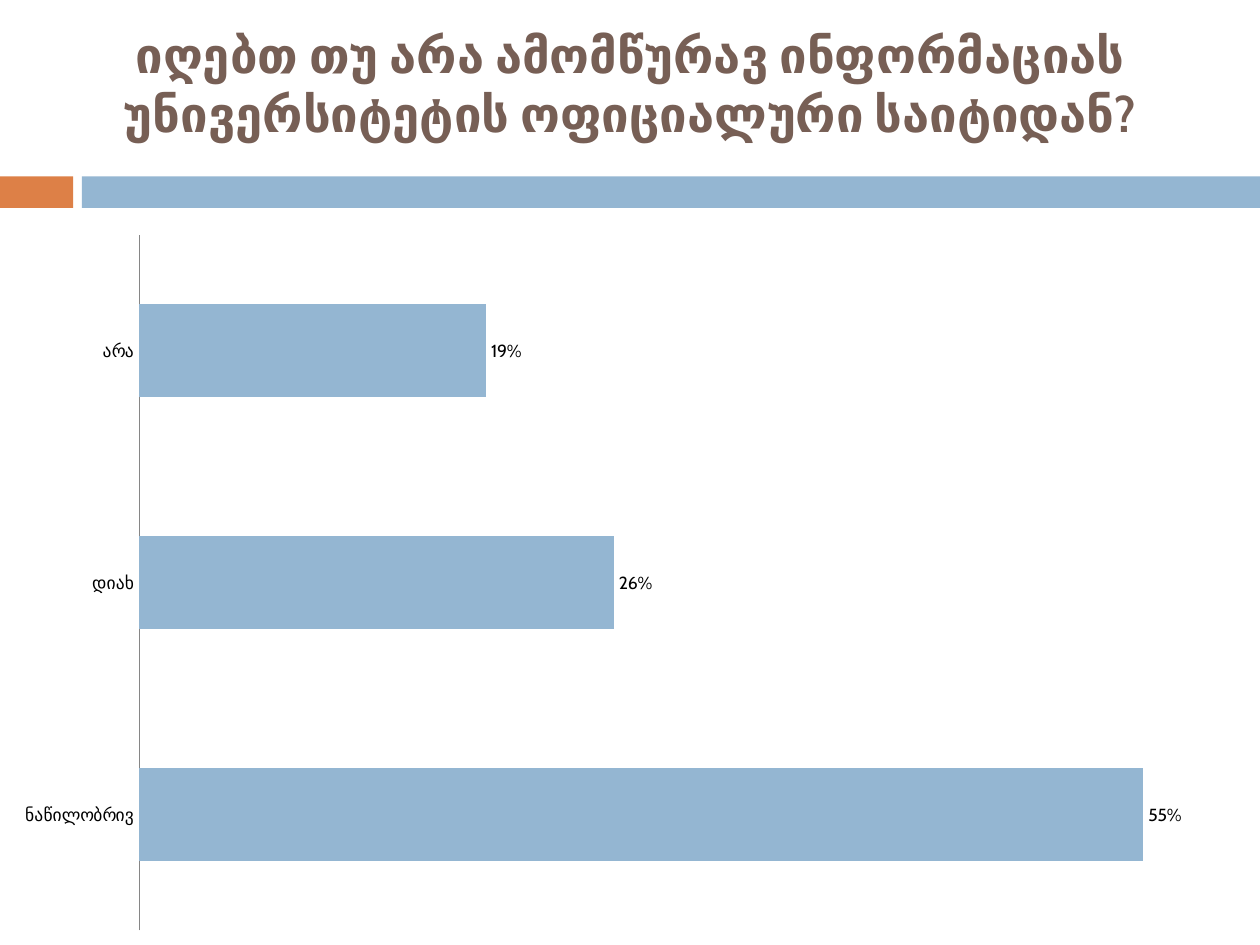
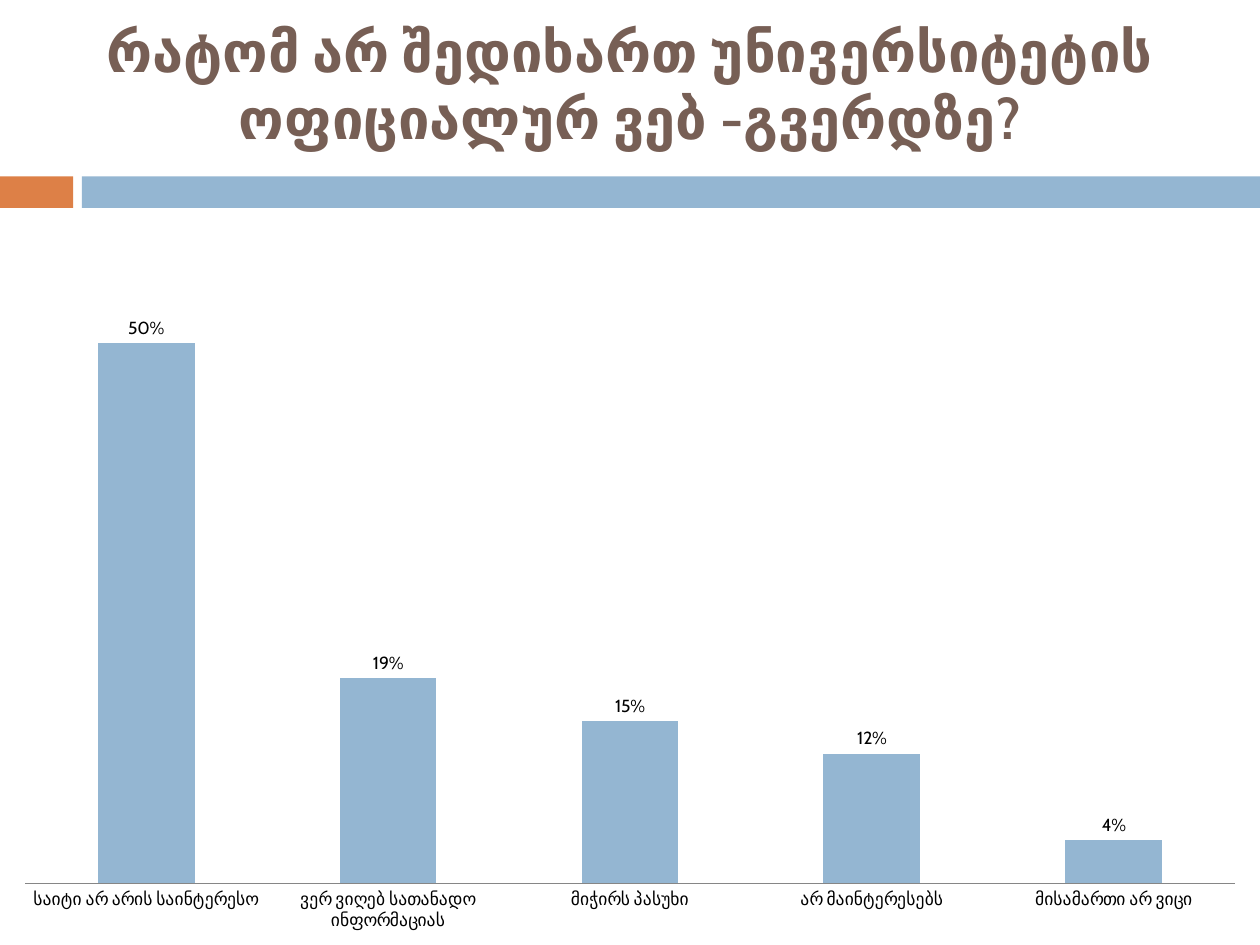
"""Build two survey slides, each with a title, a two-colour band and a bar chart."""
from dataclasses import dataclass

from pptx import Presentation
from pptx.chart.data import CategoryChartData
from pptx.dml.color import RGBColor
from pptx.enum.chart import XL_CHART_TYPE, XL_LABEL_POSITION, XL_TICK_MARK
from pptx.enum.shapes import MSO_SHAPE
from pptx.enum.text import MSO_ANCHOR, PP_ALIGN
from pptx.slide import Slide
from pptx.util import Inches, Pt

COLORS = {
    "title": "775F55",
    "accent": "DD8047",
    "main": "94B6D2",
    "text": "000000",
    "axis": "868686",
}
FONT = "Cabin"
PERCENT = "0%"
SLIDE_WIDTH = 10
SLIDE_HEIGHT = 7.5
TITLE_HEIGHT = 1.33
BAND_TOP = 1.4
BAND_HEIGHT = 0.25
CHART_TOP = 1.75


@dataclass(frozen=True)
class Band:
    left: float
    width: float
    color: str


@dataclass(frozen=True)
class SurveyQuestion:
    title: str
    title_size: int
    chart_type: XL_CHART_TYPE
    answers: dict[str, float]


BANDS = [Band(0, 0.58, "accent"), Band(0.65, SLIDE_WIDTH - 0.65, "main")]

QUESTIONS = [
    SurveyQuestion(
        "იღებთ თუ არა ამომწურავ ინფორმაციას უნივერსიტეტის ოფიციალური საიტიდან?",
        28,
        XL_CHART_TYPE.BAR_CLUSTERED,
        {"ნაწილობრივ": 0.55, "დიახ": 0.26, "არა": 0.19},
    ),
    SurveyQuestion(
        "რატომ არ შედიხართ უნივერსიტეტის ოფიციალურ ვებ -გვერდზე?",
        32,
        XL_CHART_TYPE.COLUMN_CLUSTERED,
        {
            "საიტი არ არის საინტერესო": 0.5,
            "ვერ ვიღებ სათანადო ინფორმაციას": 0.19,
            "მიჭირს პასუხი": 0.15,
            "არ მაინტერესებს": 0.12,
            "მისამართი არ ვიცი": 0.04,
        },
    ),
]


def color(name: str) -> RGBColor:
    """Return a palette colour."""
    return RGBColor.from_string(COLORS[name])


def add_band(slide: Slide, band: Band) -> None:
    """Draw one part of the band below the title."""
    shape = slide.shapes.add_shape(
        MSO_SHAPE.RECTANGLE,
        Inches(band.left), Inches(BAND_TOP), Inches(band.width), Inches(BAND_HEIGHT),
    )
    shape.shadow.inherit = False
    shape.fill.solid()
    shape.fill.fore_color.rgb = color(band.color)
    shape.line.fill.background()


def add_title(slide: Slide, question: SurveyQuestion) -> None:
    """Write the question, centred above the band."""
    text_box = slide.shapes.add_textbox(0, 0, Inches(SLIDE_WIDTH), Inches(TITLE_HEIGHT))
    text_frame = text_box.text_frame
    text_frame.word_wrap = True
    text_frame.vertical_anchor = MSO_ANCHOR.MIDDLE
    paragraph = text_frame.paragraphs[0]
    paragraph.text = question.title
    paragraph.alignment = PP_ALIGN.CENTER
    paragraph.font.name = FONT
    paragraph.font.size = Pt(question.title_size)
    paragraph.font.bold = True
    paragraph.font.color.rgb = color("title")


def add_answer_chart(slide: Slide, question: SurveyQuestion) -> None:
    """Chart the share of each answer."""
    chart_data = CategoryChartData(number_format=PERCENT)
    chart_data.categories = list(question.answers)
    chart_data.add_series("Series 1", list(question.answers.values()))
    chart = slide.shapes.add_chart(
        question.chart_type,
        0, Inches(CHART_TOP), Inches(SLIDE_WIDTH), Inches(SLIDE_HEIGHT - CHART_TOP),
        chart_data,
    ).chart
    chart.has_title = False
    chart.has_legend = False
    chart.font.name = FONT
    chart.font.size = Pt(10)
    chart.font.color.rgb = color("text")

    category_axis = chart.category_axis
    category_axis.major_tick_mark = XL_TICK_MARK.NONE
    category_axis.minor_tick_mark = XL_TICK_MARK.NONE
    category_axis.format.line.color.rgb = color("axis")
    category_axis.format.line.width = Pt(0.75)

    value_axis = chart.value_axis
    value_axis.visible = False
    value_axis.has_major_gridlines = False
    value_axis.minimum_scale = 0
    value_axis.maximum_scale = 0.6
    value_axis.tick_labels.number_format = PERCENT
    value_axis.tick_labels.number_format_is_linked = False

    plot = chart.plots[0]
    plot.vary_by_categories = False
    plot.gap_width = 150
    plot.overlap = -25
    plot.has_data_labels = True
    data_labels = plot.data_labels
    data_labels.show_value = True
    data_labels.number_format = PERCENT
    data_labels.number_format_is_linked = False
    data_labels.position = XL_LABEL_POSITION.OUTSIDE_END
    series_fill = plot.series[0].format.fill
    series_fill.solid()
    series_fill.fore_color.rgb = color("main")


def main() -> None:
    """Build and save the presentation."""
    presentation = Presentation()
    presentation.slide_width = Inches(SLIDE_WIDTH)
    presentation.slide_height = Inches(SLIDE_HEIGHT)
    for question in QUESTIONS:
        slide = presentation.slides.add_slide(presentation.slide_layouts[6])
        for band in BANDS:
            add_band(slide, band)
        add_title(slide, question)
        add_answer_chart(slide, question)
    presentation.save("out.pptx")


if __name__ == "__main__":
    main()
